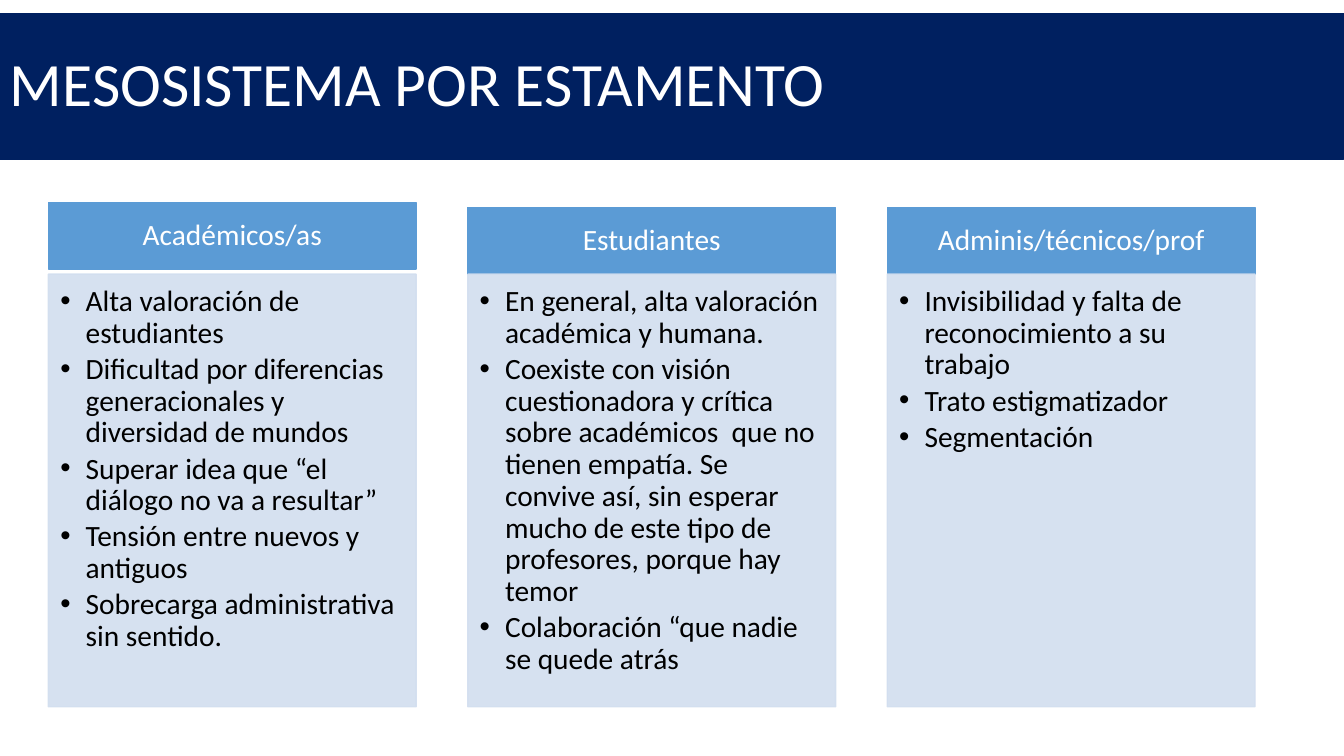
from lxml import etree
from pptx import Presentation
from pptx.dml.color import RGBColor
from pptx.enum.shapes import MSO_SHAPE
from pptx.enum.text import MSO_ANCHOR, MSO_AUTO_SIZE, PP_ALIGN
from pptx.oxml.ns import qn
from pptx.util import Cm, Pt

RECTANGLE = MSO_SHAPE.RECTANGLE
TOP, MIDDLE = MSO_ANCHOR.TOP, MSO_ANCHOR.MIDDLE
LEFT, CENTER = PP_ALIGN.LEFT, PP_ALIGN.CENTER
NO_AUTOFIT = MSO_AUTO_SIZE.NONE
TITLE_ONLY_LAYOUT = 5

FONT = "Calibri"
NAVY, BLUE, PALE_BLUE = "002060", "5B9BD5", "D2DEEF"
WHITE, BLACK = "FFFFFF", "000000"

TITLE = "MESOSISTEMA POR ESTAMENTO"
COLUMN_LEFT, COLUMN_PITCH, COLUMN_WIDTH = 1.22, 10.57, 9.27
LIST_TOP, LIST_HEIGHT, HEADER_HEIGHT = 6.91, 10.9, 1.68
COLUMNS = [
    ("Académicos/as", 0.13, [
        "Alta valoración de estudiantes",
        "Dificultad por diferencias  generacionales y diversidad de mundos",
        "Superar idea que “el diálogo no va a resultar”",
        "Tensión entre nuevos y antiguos",
        "Sobrecarga administrativa sin sentido.",
    ]),
    ("Estudiantes", 0, [
        "En general, alta valoración académica y humana.",
        "Coexiste con visión cuestionadora y crítica sobre académicos  que no "
        "tienen empatía. Se convive así, sin esperar mucho de este tipo de "
        "profesores, porque hay temor",
        "Colaboración “que nadie se quede atrás",
    ]),
    ("Adminis/técnicos/prof", 0, [
        "Invisibilidad y falta de reconocimiento a su trabajo",
        "Trato estigmatizador",
        "Segmentación",
    ]),
]


def color(value):
    """Return the colour for a hex string."""
    return RGBColor.from_string(value)


def paint(shape, value, line_width):
    """Give a shape one colour for its fill and outline."""
    shape.fill.solid()
    shape.fill.fore_color.rgb = color(value)
    shape.line.color.rgb = color(value)
    shape.line.width = Pt(line_width)


def set_opacity(shape, percent):
    """Make the fill and outline of a shape partly transparent."""
    for node in shape.element.spPr.iter(qn("a:srgbClr")):
        etree.SubElement(node, qn("a:alpha"), val=str(percent * 1000))


def set_insets(text_frame, left, top, right, bottom):
    """Set the inner margins of a text frame in centimetres."""
    text_frame.margin_left, text_frame.margin_top = Cm(left), Cm(top)
    text_frame.margin_right, text_frame.margin_bottom = Cm(right), Cm(bottom)


def format_paragraph(paragraph, size, font_color, alignment, space_after=0):
    """Set the spacing, alignment and font of a paragraph."""
    paragraph.alignment = alignment
    paragraph.line_spacing = 0.9
    paragraph.space_before = Pt(0)
    paragraph.space_after = Pt(space_after)
    paragraph.font.name = FONT
    paragraph.font.size = Pt(size)
    paragraph.font.color.rgb = color(font_color)


def add_bullet(paragraph):
    """Give a paragraph a round bullet with a hanging indent."""
    properties = paragraph._p.get_or_add_pPr()
    properties.set("marL", str(Cm(0.64)))
    properties.set("indent", str(-Cm(0.64)))
    etree.SubElement(properties, qn("a:buFont"), typeface="Arial")
    etree.SubElement(properties, qn("a:buChar"), char="•")


def add_box(slide, left, top, width, height, value):
    """Add a flat coloured rectangle."""
    shape = slide.shapes.add_shape(RECTANGLE, Cm(left), Cm(top), Cm(width), Cm(height))
    shape.shadow.inherit = False
    paint(shape, value, 1)
    shape.text_frame.word_wrap = True
    return shape


def add_header(slide, left, top, width, height, text):
    """Add the heading box of a column."""
    text_frame = add_box(slide, left, top, width, height, BLUE).text_frame
    text_frame.vertical_anchor = MIDDLE
    set_insets(text_frame, 0.41, 0.23, 0.41, 0.23)
    text_frame.text = text
    format_paragraph(text_frame.paragraphs[0], 21, WHITE, CENTER)


def add_list(slide, left, top, width, height, items):
    """Add the bulleted box of a column."""
    shape = add_box(slide, left, top, width, height, PALE_BLUE)
    set_opacity(shape, 90)
    text_frame = shape.text_frame
    text_frame.vertical_anchor = TOP
    set_insets(text_frame, 0.3, 0.3, 0.41, 0.46)
    text_frame.text = "\n".join(items)
    for paragraph in text_frame.paragraphs:
        add_bullet(paragraph)
        format_paragraph(paragraph, 21, BLACK, LEFT, 3.15)


def add_title(slide, left, top, width, height, text):
    """Turn the title placeholder into a full-width banner."""
    title = slide.shapes.title
    title.left, title.top = Cm(left), Cm(top)
    title.width, title.height = Cm(width), Cm(height)
    paint(title, NAVY, 0.75)
    text_frame = title.text_frame
    text_frame.auto_size = NO_AUTOFIT
    text_frame.word_wrap = True
    text_frame.vertical_anchor = MIDDLE
    set_insets(text_frame, 0.25, 0.13, 0.25, 0.13)
    text_frame.text = text
    format_paragraph(text_frame.paragraphs[0], 44, WHITE, LEFT)


def main():
    """Build and save the presentation."""
    presentation = Presentation()
    presentation.slide_width, presentation.slide_height = Cm(33.87), Cm(19.05)
    slide = presentation.slides.add_slide(presentation.slide_layouts[TITLE_ONLY_LAYOUT])
    add_title(slide, 0, 0.33, 33.87, 3.68, TITLE)
    for index, (heading, lift, items) in enumerate(COLUMNS):
        left = COLUMN_LEFT + index * COLUMN_PITCH
        header_top = LIST_TOP - HEADER_HEIGHT - lift
        add_header(slide, left, header_top, COLUMN_WIDTH, HEADER_HEIGHT, heading)
        add_list(slide, left, LIST_TOP, COLUMN_WIDTH, LIST_HEIGHT, items)
    presentation.save("out.pptx")


if __name__ == "__main__":
    main()
